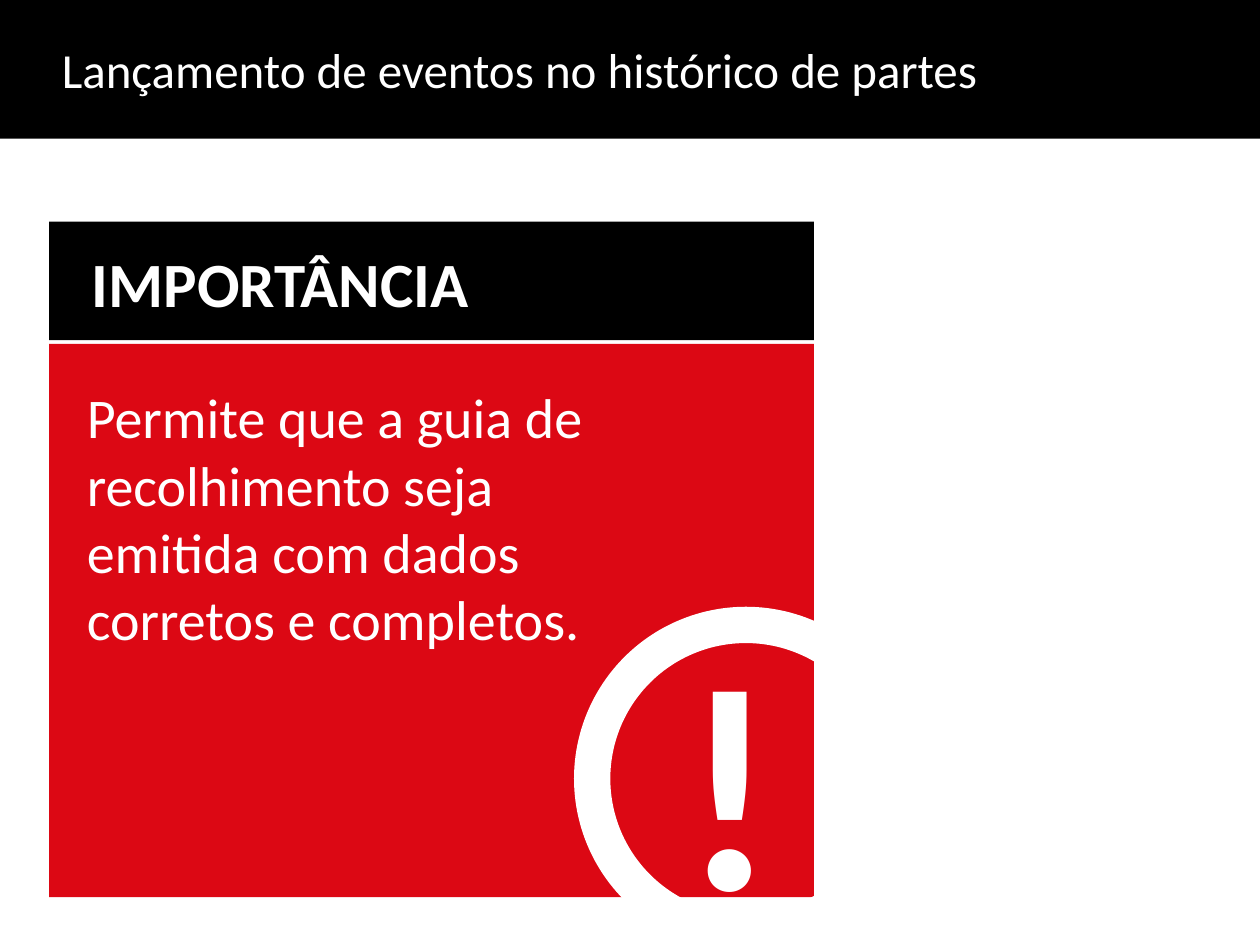
import pptx
import pptx.dml.color
import pptx.enum.shapes
import pptx.enum.text
import pptx.util

Inches = pptx.util.Inches
Pt = pptx.util.Pt
Shape = pptx.enum.shapes.MSO_SHAPE
Anchor = pptx.enum.text.MSO_ANCHOR
Align = pptx.enum.text.PP_ALIGN
AutoSize = pptx.enum.text.MSO_AUTO_SIZE

COLORS = {"black": "000000", "red": "DC0814", "white": "FFFFFF"}


def rgb(name):
    return pptx.dml.color.RGBColor.from_string(COLORS[name])


def place(item, left, top, width, height):
    bounds = {"left": left, "top": top, "width": width, "height": height}
    for name, value in bounds.items():
        setattr(item, name, Inches(value))


def write(frame, text, size, bold=False, **frame_format):
    for name, value in frame_format.items():
        setattr(frame, name, value)
    para = frame.paragraphs[0]
    para.alignment = Align.LEFT
    span = para.add_run()
    span.text = text
    font_format = {"name": "Calibri", "size": Pt(size), "bold": bold}
    for name, value in font_format.items():
        setattr(span.font, name, value)
    span.font.color.rgb = rgb("white")


def add_panel(page, color, *bounds):
    panel = page.shapes.add_shape(Shape.RECTANGLE, *map(Inches, bounds))
    panel.shadow.inherit = False
    panel.fill.solid()
    panel.fill.fore_color.rgb = rgb(color)
    panel.line.fill.background()


def add_text(page, text, size, bounds, bold=False):
    box = page.shapes.add_textbox(*map(Inches, bounds))
    write(box.text_frame, text, size, bold,
          word_wrap=True, auto_size=AutoSize.SHAPE_TO_FIT_TEXT)


def title_band(page, left, top, width, height):
    title = page.shapes.title
    place(title, left, top, width, height)
    title.fill.solid()
    title.fill.fore_color.rgb = rgb("black")
    write(title.text_frame, "Lançamento de eventos no histórico de partes", 28,
          vertical_anchor=Anchor.MIDDLE, auto_size=AutoSize.NONE,
          margin_left=Inches(0.49))


def warning_sign(page, left, top, size):
    ring = page.shapes.add_shape(
        Shape.OVAL, *map(Inches, (left, top, size, size)))
    ring.shadow.inherit = False
    ring.fill.background()
    ring.line.color.rgb = rgb("white")
    ring.line.width = Pt(20.75)
    add_text(page, "!", 166, (left + 0.62, top - 0.25, 0.79, 2.89), bold=True)


def importance_card(page, left, top, width, height):
    header_height, gap = 0.94, 0.03
    body_top = top + header_height + gap
    add_panel(page, "black", left, top, width, header_height)
    add_panel(page, "red", left, body_top, width, top + height - body_top)
    add_text(page, "IMPORTÂNCIA", 36,
             (left + 0.24, top + 0.13, 3.65, 0.7), bold=True)
    add_text(page, "Permite que a guia de recolhimento seja emitida "
             "com dados corretos e completos.", 32,
             (left + 0.2, body_top + 0.26, 4.51, 2.26))
    warning_sign(page, left + 4.31, body_top + 2.23, 2.44)


def main():
    deck = pptx.Presentation()
    deck.slide_width = Inches(10)
    deck.slide_height = Inches(7.5)
    page = deck.slides.add_slide(deck.slide_layouts.get_by_name("Title Only"))
    title_band(page, 0, 0, 10, 1.1)
    importance_card(page, 0.39, 1.76, 6.07, 5.36)
    deck.save("out.pptx")


if __name__ == "__main__":
    main()
